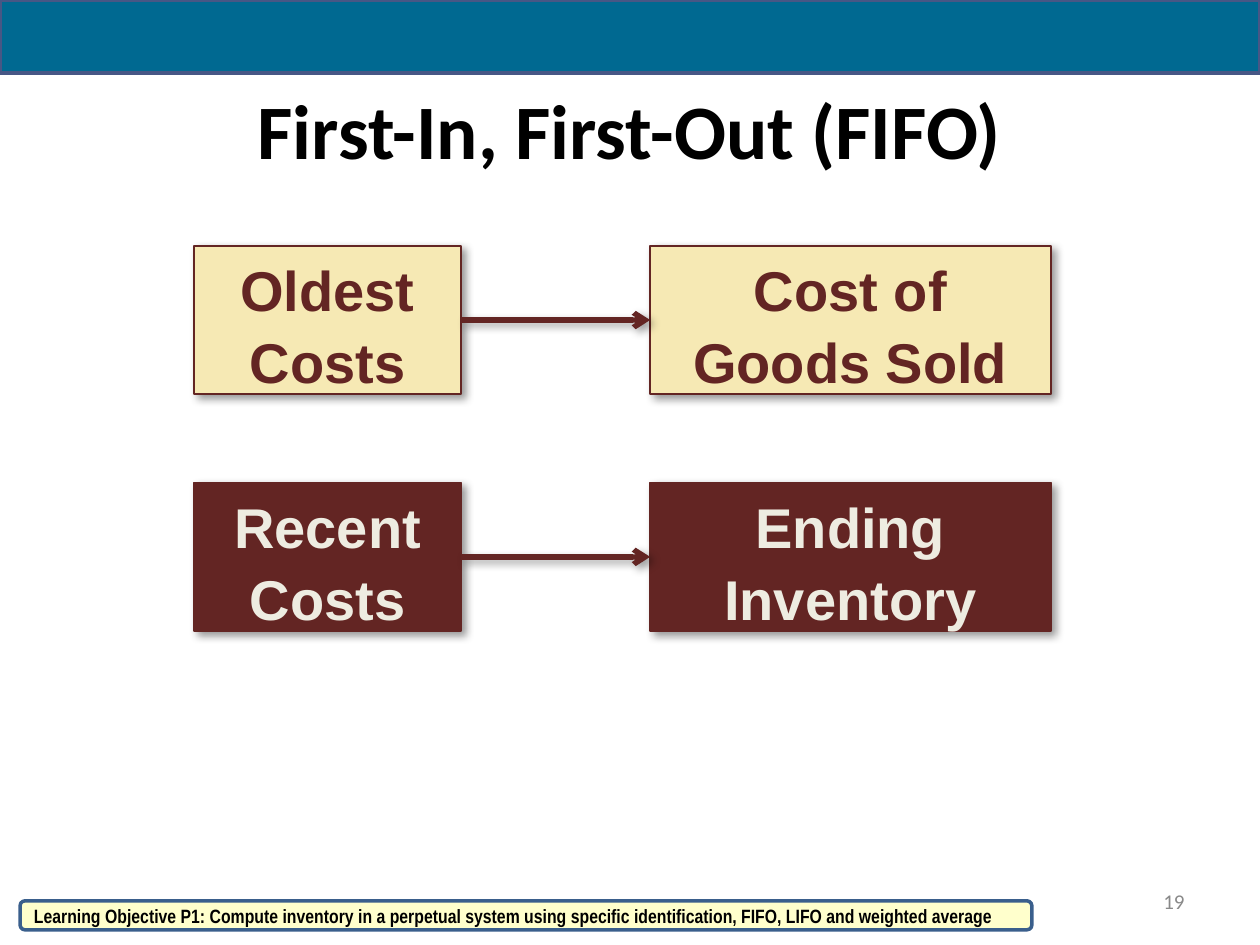
from dataclasses import dataclass

from lxml import etree
from pptx import Presentation, util as u
from pptx.dml.color import RGBColor
from pptx.enum import shapes, text
from pptx.oxml import ns


@dataclass(frozen=True)
class Theme:
    band: str = "006991"
    band_line: str = "475785"
    cream: str = "F6E9B4"
    maroon: str = "632523"
    ivory: str = "EEECE1"
    note: str = "FFFFCC"
    note_line: str = "3A5F8C"
    black: str = "000000"
    grey: str = "898989"
    title_size: int = 44
    box_size: int = 32
    number_size: int = 12
    note_size: int = 11


THEME = Theme()
TITLE = "First-In, First-Out (FIFO)"
FLOWS = [  # source, destination, fill, text colour
    ("Oldest Costs", "Cost of Goods Sold", THEME.cream, THEME.maroon),
    ("Recent Costs", "Ending Inventory", THEME.maroon, THEME.ivory),
]
OBJECTIVE = ("Learning Objective P1: Compute inventory in a perpetual system using "
             "specific identification, FIFO, LIFO and weighted average")
PAGE_NUMBER = "19"

SLIDE_WIDTH, SLIDE_HEIGHT = 10, 7.5
COLUMNS = [(1.54, 2.12), (5.16, 3.18)]  # left, width
FIRST_ROW, ROW_STEP, BOX_HEIGHT = 1.95, 1.88, 1.18


def inches(*lengths):
    return [u.Inches(length) for length in lengths]


def write(shape, content, *, size, color, font="Calibri", bold=False,
          align=text.PP_ALIGN.CENTER, anchor=text.MSO_ANCHOR.MIDDLE, spacing=None):
    frame = shape.text_frame
    frame.word_wrap = True
    frame.vertical_anchor = anchor
    paragraph = frame.paragraphs[0]
    paragraph.alignment = align
    paragraph.line_spacing = spacing
    run = paragraph.add_run()
    run.text = content
    run.font.size, run.font.name, run.font.bold = u.Pt(size), font, bold
    run.font.color.rgb = RGBColor.from_string(color)


def set_line(shape, color, width):
    shape.line.color.rgb = RGBColor.from_string(color)
    shape.line.width = u.Pt(width)


def add_box(slide, kind, place, fill, line, width):
    shape = slide.shapes.add_shape(kind, *inches(*place))
    shape.shadow.inherit = False
    shape.fill.solid()
    shape.fill.fore_color.rgb = RGBColor.from_string(fill)
    set_line(shape, line, width)
    return shape


def add_shadow(shape):
    """Give a shape or connector a soft shadow to the lower right."""
    properties = shape.element.spPr
    effects = properties.find(ns.qn("a:effectLst"))
    if effects is None:
        effects = etree.SubElement(properties, ns.qn("a:effectLst"))
    shadow = etree.SubElement(effects, ns.qn("a:outerShdw"), blurRad=str(u.Pt(5)),
                              dist=str(u.Pt(3)), dir=str(45 * 60000),
                              algn="tl", rotWithShape="0")
    color = etree.SubElement(shadow, ns.qn("a:srgbClr"), val=THEME.black)
    etree.SubElement(color, ns.qn("a:alpha"), val="40000")


def add_arrow(slide, source, destination):
    arrow = slide.shapes.add_connector(shapes.MSO_CONNECTOR.STRAIGHT, 0, 0, 0, 0)
    arrow.begin_connect(source, 3)
    arrow.end_connect(destination, 1)
    set_line(arrow, THEME.maroon, 3)
    line = arrow.element.spPr.find(ns.qn("a:ln"))
    etree.SubElement(line, ns.qn("a:tailEnd"), type="arrow")
    add_shadow(arrow)


def add_flow(slide, row, flow):
    *labels, fill, color = flow
    boxes = []
    for label, (left, width) in zip(labels, COLUMNS):
        place = (left, FIRST_ROW + row * ROW_STEP, width, BOX_HEIGHT)
        box = add_box(slide, shapes.MSO_SHAPE.RECTANGLE, place, fill, THEME.maroon, 1)
        add_shadow(box)
        write(box, label, size=THEME.box_size, color=color, font="Arial", bold=True,
              anchor=text.MSO_ANCHOR.TOP, spacing=1.06)
        boxes.append(box)
    add_arrow(slide, *boxes)


def main():
    presentation = Presentation()
    presentation.slide_width, presentation.slide_height = inches(SLIDE_WIDTH, SLIDE_HEIGHT)
    slide = presentation.slides.add_slide(presentation.slide_layouts.get_by_name("Title Only"))

    title = slide.shapes.title
    title.left, title.top, title.width, title.height = inches(0.5, 0.5, 9, 1.05)
    write(title, TITLE, size=THEME.title_size, color=THEME.black, bold=True)

    for row, flow in enumerate(FLOWS):
        add_flow(slide, row, flow)

    add_box(slide, shapes.MSO_SHAPE.RECTANGLE, (0, 0, SLIDE_WIDTH, 0.58),
            THEME.band, THEME.band_line, 2.25)

    number = slide.shapes.add_textbox(*inches(7.17, 6.95, 2.33, 0.4))
    write(number, PAGE_NUMBER, size=THEME.number_size, color=THEME.grey,
          align=text.PP_ALIGN.RIGHT)

    objective = add_box(slide, shapes.MSO_SHAPE.ROUNDED_RECTANGLE, (0.16, 7.15, 8.03, 0.23),
                        THEME.note, THEME.note_line, 2)
    write(objective, OBJECTIVE, size=THEME.note_size, color=THEME.black,
          font="Arial Narrow", bold=True, align=text.PP_ALIGN.LEFT)

    presentation.save("out.pptx")


if __name__ == "__main__":
    main()
